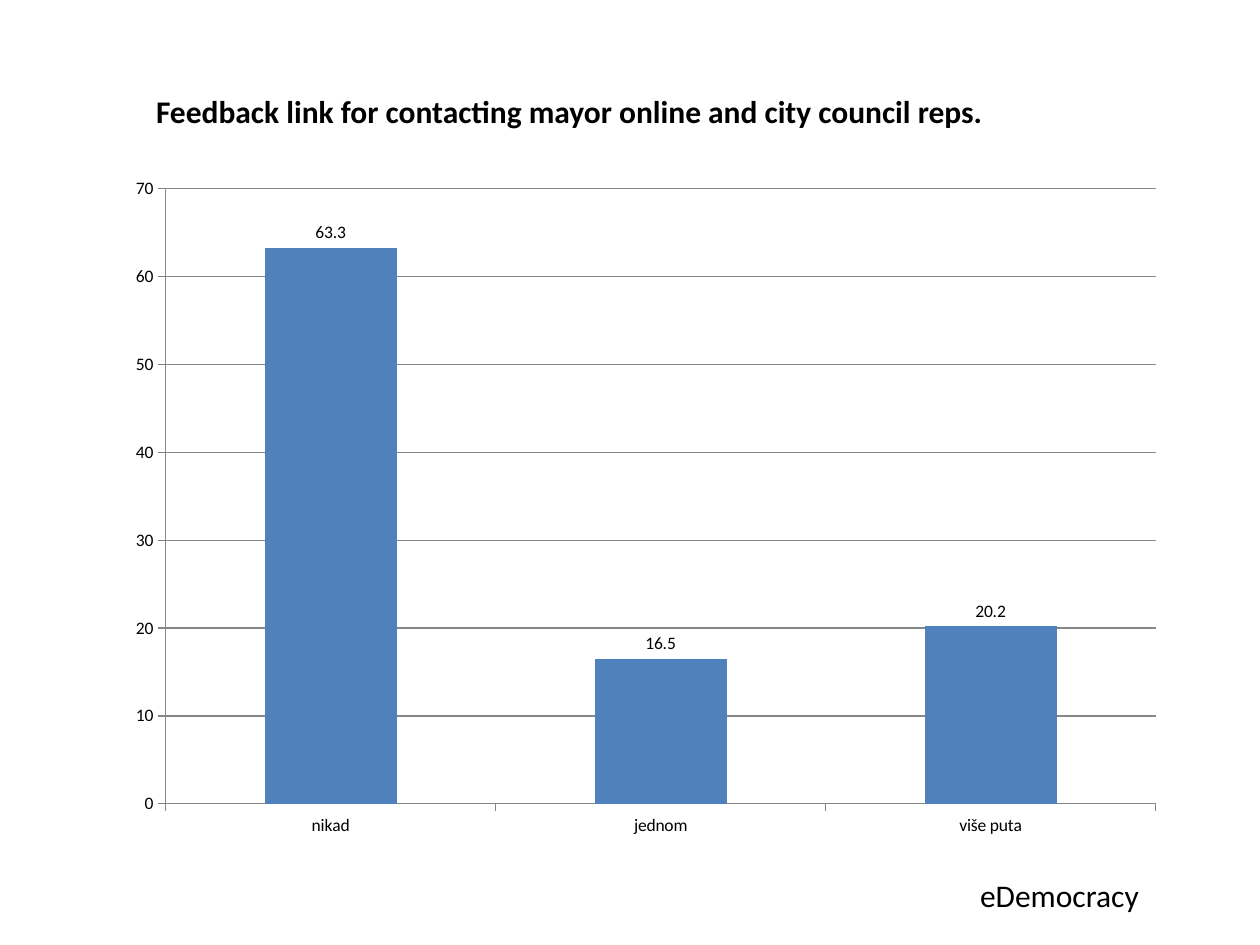
from pptx import Presentation, util as u
from pptx.chart.data import CategoryChartData
from pptx.dml.color import RGBColor
from pptx.enum import chart as ec, text as et

WIDE, HIGH = 10, 7.5
FONT, INK, GREY, BLUE = "Calibri", "000000", "868686", "4F81BD"
TITLE = "Feedback link for contacting mayor online and city council reps."
TOPIC = "eDemocracy"
VOTES = {"nikad": 63.3, "jednom": 16.5, "više puta": 20.2}
SPOTS = {
    "title": (0.114, 0.091, 0.724, 0.053),
    "topic": (0.768, 0.92, 0.205, 0.053),
    "chart": (0.091, 0.175, 0.843, 0.724),
}


def color(code):
    return RGBColor.from_string(code)


def place(name):
    return [u.Inches(part * side) for part, side in zip(SPOTS[name], (WIDE, HIGH) * 2)]


def style(font, size, bold=False):
    font.name, font.size, font.bold = FONT, u.Pt(size), bold
    font.color.rgb = color(INK)


def write(slide, name, words, size=18, bold=False):
    frame = slide.shapes.add_textbox(*place(name)).text_frame
    frame.word_wrap = True
    frame.auto_size = et.MSO_AUTO_SIZE.SHAPE_TO_FIT_TEXT
    run = frame.paragraphs[0].add_run()
    run.text = words
    style(run.font, size, bold)


def rule(line):
    line.color.rgb = color(GREY)
    line.width = u.Pt(0.75)


def plot(slide):
    data = CategoryChartData()
    data.categories = list(VOTES)
    data.add_series("Series 1", list(VOTES.values()))
    kind = ec.XL_CHART_TYPE.COLUMN_CLUSTERED
    chart = slide.shapes.add_chart(kind, *place("chart"), data).chart
    chart.has_legend = chart.has_title = False
    style(chart.font, 10)

    bars = chart.plots[0]
    bars.gap_width = 150
    bars.vary_by_categories = False
    fill = bars.series[0].format.fill
    fill.solid()
    fill.fore_color.rgb = color(BLUE)
    bars.has_data_labels = True
    labels = bars.data_labels
    labels.show_value = True
    labels.position = ec.XL_LABEL_POSITION.OUTSIDE_END
    style(labels.font, 10)

    for axis in (chart.category_axis, chart.value_axis):
        axis.major_tick_mark = ec.XL_TICK_MARK.OUTSIDE
        axis.minor_tick_mark = ec.XL_TICK_MARK.NONE
        rule(axis.format.line)
    scale = chart.value_axis
    scale.minimum_scale, scale.maximum_scale, scale.major_unit = 0, 70, 10
    scale.has_major_gridlines = True
    rule(scale.major_gridlines.format.line)


def main():
    deck = Presentation()
    deck.slide_width, deck.slide_height = u.Inches(WIDE), u.Inches(HIGH)
    slide = deck.slides.add_slide(deck.slide_layouts[6])
    write(slide, "title", TITLE, bold=True)
    write(slide, "topic", TOPIC)
    plot(slide)
    deck.save("out.pptx")


if __name__ == "__main__":
    main()
